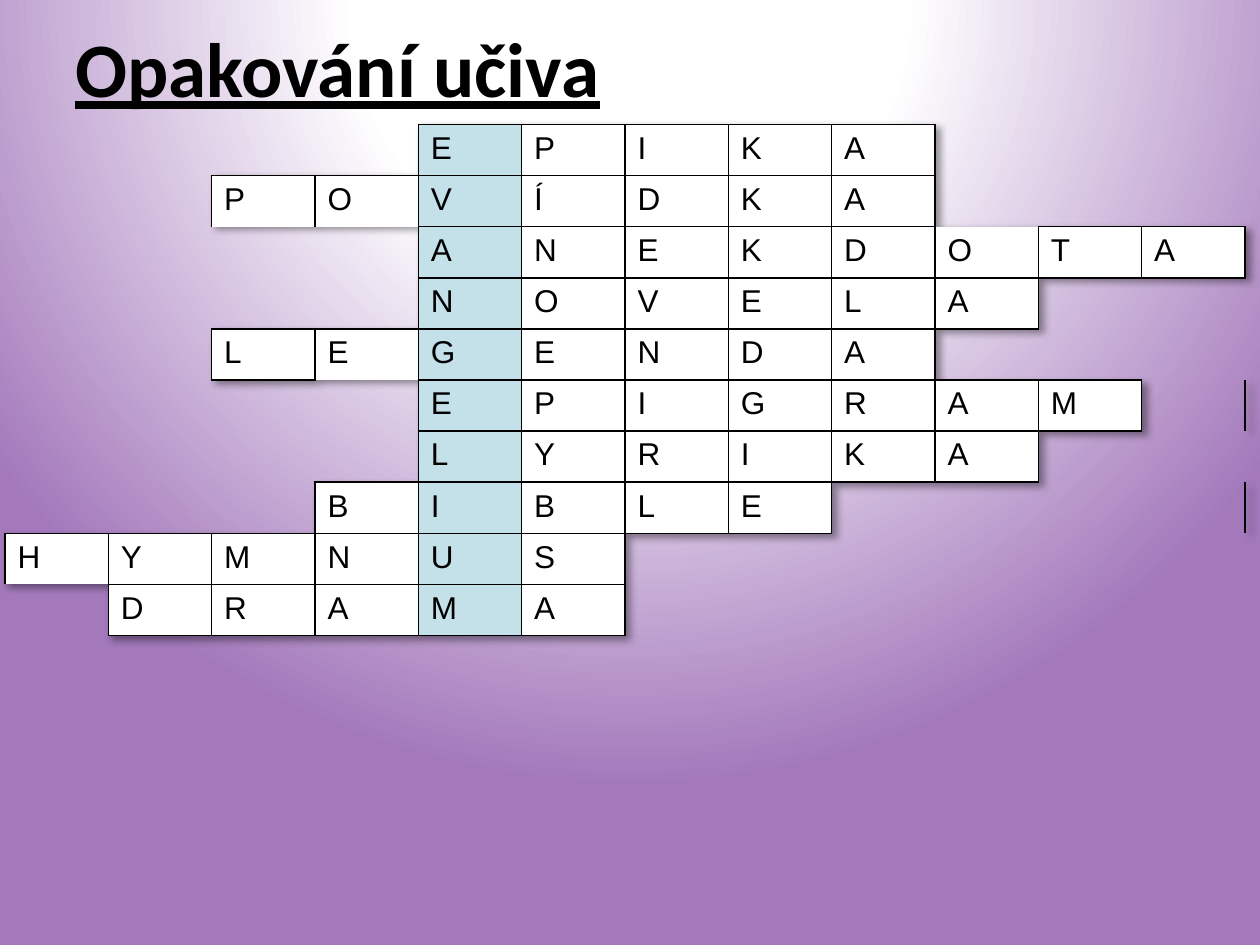
import pptx
import pptx.util
import pptx.oxml
import pptx.oxml.ns
import pptx.dml.color
import pptx.enum.text

Cm, Pt = pptx.util.Cm, pptx.util.Pt

# Content: start column and word of each row
TITLE = "Opakování učiva"
WORDS = [
    (4, "EPIKA"), (2, "POVÍDKA"), (4, "ANEKDOTA"), (4, "NOVELA"),
    (2, "LEGENDA"), (4, "EPIGRAM"), (4, "LYRIKA"), (3, "BIBLE"),
    (0, "HYMNUS"), (1, "DRAMA"),
]
COLS, KEY = 12, 4  # KEY is the column that spells the answer

# Letter cells with one side left open, and lone lines on blank cells
OPEN = {(1, 2, "B"), (1, 3, "B"), (2, 9, "T"), (4, 3, "B"), (8, 0, "B")}
LONE = {(5, 11, "R"), (7, 11, "R")}
SIDES = {"L": (0, -1, "R"), "R": (0, 1, "L"), "T": (-1, 0, "B"), "B": (1, 0, "T")}

THEME = {
    "ink": "000000", "cell": "FFFFFF", "key": "C4E0E9",
    "glow": "FFFFFF", "edge": "A379BB",
    "head": ("Calibri", 44), "body": ("Arial", 18), "line": 1,
}
NS = pptx.oxml.ns.nsdecls("a", "p")
PLAIN = "{2D5ABB26-0587-4C30-8999-92F81FD0307C}"  # table style without grid


def tint(name):
    return pptx.dml.color.RGBColor.from_string(THEME[name])


def style(para, kind):
    face, size = THEME[kind]
    para.font.name, para.font.size = face, Pt(size)
    para.font.color.rgb = tint("ink")


def drawn(row, col, side):
    """Tell whether a side shows: a letter cell on it, and not left open."""
    down, right, back = SIDES[side]
    pair = [(row, col, side), (row + down, col + right, back)]
    if pair[0] in LONE:
        return True
    return any(p[:2] in grid for p in pair) and not OPEN.intersection(pair)


grid = {(row, start + i): char
        for row, (start, word) in enumerate(WORDS)
        for i, char in enumerate(word)}

deck = pptx.Presentation()
deck.slide_width, deck.slide_height = Cm(25.4), Cm(19.05)
slide = deck.slides.add_slide(deck.slide_layouts[6])

# Background: round glow from above the slide
stops = "".join(
    f'<a:gs pos="{pos}000"><a:srgbClr val="{THEME[name]}"/></a:gs>'
    for pos, name in [(0, "glow"), (35, "glow"), (100, "edge")])
slide.element.cSld.insert(0, pptx.oxml.parse_xml(
    f'<p:bg {NS}><p:bgPr><a:gradFill rotWithShape="1"><a:gsLst>{stops}</a:gsLst>'
    '<a:path path="circle"><a:fillToRect l="50000" t="-80000" r="50000" b="180000"/>'
    '</a:path></a:gradFill><a:effectLst/></p:bgPr></p:bg>'))

# Title
box = slide.shapes.add_textbox(Cm(1.27), Cm(0.76), Cm(22.86), Cm(1.17))
frame = box.text_frame
frame.word_wrap = True
frame.vertical_anchor = pptx.enum.text.MSO_ANCHOR.MIDDLE
para = frame.paragraphs[0]
para.text = TITLE
style(para, "head")
para.font.bold = para.font.underline = True

# Crossword table
wide, high = 25 / COLS, 1.03
shape = slide.shapes.add_table(len(WORDS), COLS, Cm(0.1), Cm(2.51),
                               Cm(wide * COLS), Cm(high * len(WORDS)))
table = shape.table
table.first_row = table.horz_banding = False
for part in table.columns:
    part.width = Cm(wide)
for part in table.rows:
    part.height = Cm(high)

# Plain style and soft shadow
props = shape.element.find(".//" + pptx.oxml.ns.qn("a:tblPr"))
props.find(pptx.oxml.ns.qn("a:tableStyleId")).text = PLAIN
props.insert(0, pptx.oxml.parse_xml(
    f'<a:effectLst {NS}><a:outerShdw blurRad="50800" dist="38100" dir="2700000" '
    f'algn="tl" rotWithShape="0"><a:srgbClr val="{THEME["ink"]}">'
    '<a:alpha val="40000"/></a:srgbClr></a:outerShdw></a:effectLst>'))

# Letters, fills and borders; hidden borders are switched off outright
solid = f'<a:solidFill><a:srgbClr val="{THEME["ink"]}"/></a:solidFill>'
for row in range(len(WORDS)):
    for col in range(COLS):
        cell = table.cell(row, col)
        para = cell.text_frame.paragraphs[0]
        if (row, col) in grid:
            para.text = grid[row, col]
            cell.fill.solid()
            cell.fill.fore_color.rgb = tint("key" if col == KEY else "cell")
        else:
            cell.fill.background()
        style(para, "body")
        for i, side in enumerate(SIDES):
            ink = solid if drawn(row, col, side) else "<a:noFill/>"
            cell._tc.tcPr.insert(i, pptx.oxml.parse_xml(
                f'<a:ln{side} {NS} w="{Pt(THEME["line"])}">{ink}</a:ln{side}>'))

deck.save("out.pptx")
